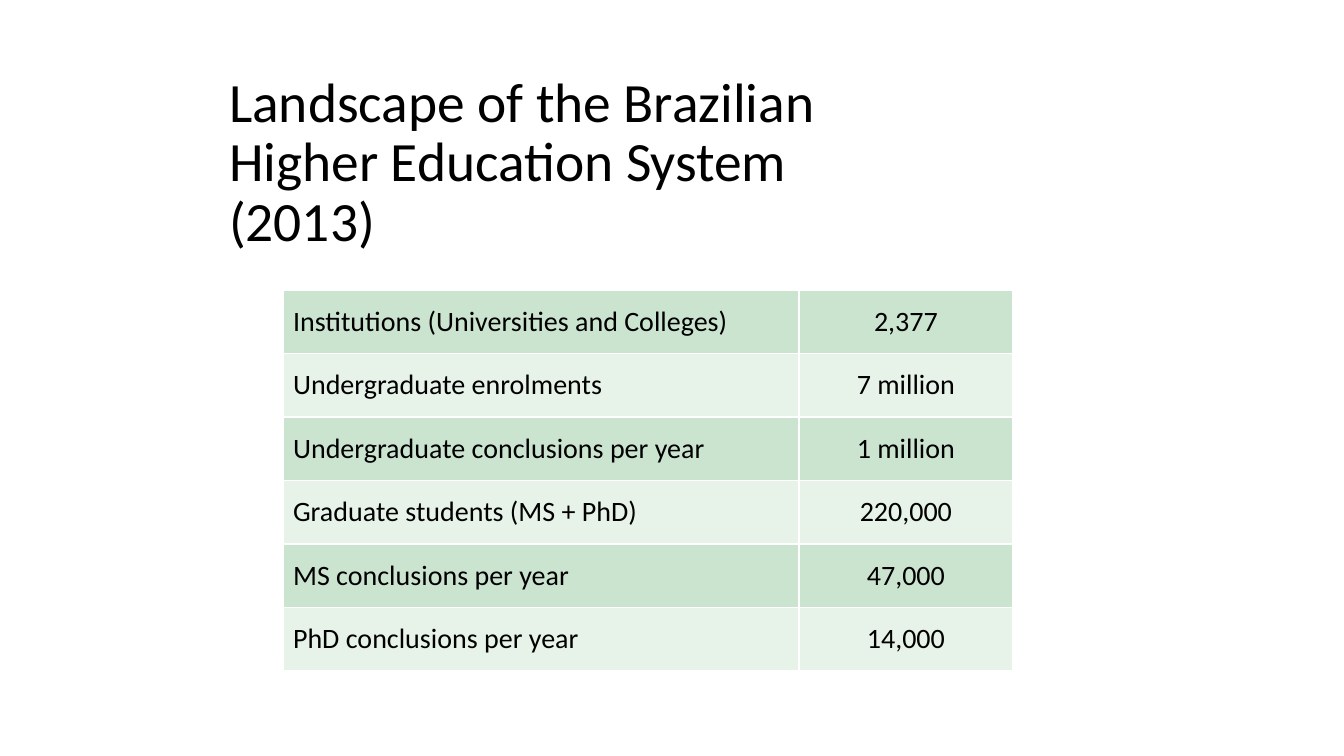
from dataclasses import dataclass

from lxml.etree import SubElement
from pptx import Presentation
from pptx.dml.color import RGBColor
from pptx.enum.text import MSO_ANCHOR, MSO_AUTO_SIZE, PP_ALIGN
from pptx.oxml.ns import qn
from pptx.util import Emu, Pt

TITLE = "Landscape of the Brazilian Higher Education System (2013)"
FIGURES = [
    ("Institutions (Universities and Colleges)", "2,377"),
    ("Undergraduate enrolments", "7 million"),
    ("Undergraduate conclusions per year", "1 million"),
    ("Graduate students (MS + PhD)", "220,000"),
    ("MS conclusions per year", "47,000"),
    ("PhD conclusions per year", "14,000"),
]

SLIDE_SIZE = (1344, 756)
TITLE_BOX = (219, 101, 703, 126)
TABLE_AT = (283, 290)
TABLE_HEIGHT = 381
COLUMN_WIDTHS = (516, 214)
COLUMN_ALIGN = (PP_ALIGN.LEFT, PP_ALIGN.CENTER)


@dataclass(frozen=True)
class Theme:
    font: str = "Calibri"
    text: str = "000000"
    bands: tuple = ("CBE4D0", "E7F2E9")
    border: str = "FFFFFF"
    border_pt: float = 1
    title_pt: float = 39.6
    cell_pt: float = 20


THEME = Theme()


def px(n):
    return Emu(round(n * 914400 / 100.8))


def set_all(target, values):
    for name, value in values.items():
        setattr(target, name, value)


def write(tf, text, size, **paragraph_format):
    p = tf.paragraphs[0]
    set_all(p, paragraph_format)
    r = p.add_run()
    r.text = text
    set_all(r.font, {"name": THEME.font, "size": Pt(size), "bold": False})
    r.font.color.rgb = RGBColor.from_string(THEME.text)


def add_borders(cell):
    """Draw all four edges; they must precede the fill in the cell's XML."""
    tcPr = cell._tc.get_or_add_tcPr()
    for edge in ("lnL", "lnR", "lnT", "lnB"):
        ln = SubElement(tcPr, qn(f"a:{edge}"), w=str(Pt(THEME.border_pt)))
        fill = SubElement(ln, qn("a:solidFill"))
        SubElement(fill, qn("a:srgbClr"), val=THEME.border)


def add_title(s):
    sp = s.shapes.title
    set_all(sp, dict(zip(("left", "top", "width", "height"), map(px, TITLE_BOX))))
    set_all(sp.text_frame, {
        "word_wrap": True,
        "auto_size": MSO_AUTO_SIZE.NONE,
        "vertical_anchor": MSO_ANCHOR.MIDDLE,
    })
    write(sp.text_frame, TITLE, THEME.title_pt,
          alignment=PP_ALIGN.LEFT, line_spacing=0.9)


def add_figures(s):
    table = s.shapes.add_table(
        len(FIGURES), len(COLUMN_WIDTHS), *map(px, TABLE_AT),
        px(sum(COLUMN_WIDTHS)), px(TABLE_HEIGHT)).table
    set_all(table, {"first_row": False, "horz_banding": False})
    for column, width in zip(table.columns, COLUMN_WIDTHS):
        column.width = px(width)
    for i, figures in enumerate(FIGURES):
        table.rows[i].height = px(TABLE_HEIGHT / len(FIGURES))
        for j, text in enumerate(figures):
            cell = table.cell(i, j)
            cell.vertical_anchor = MSO_ANCHOR.MIDDLE
            add_borders(cell)
            cell.fill.solid()
            cell.fill.fore_color.rgb = RGBColor.from_string(THEME.bands[i % 2])
            write(cell.text_frame, text, THEME.cell_pt, alignment=COLUMN_ALIGN[j])


def main():
    prs = Presentation()
    prs.slide_width, prs.slide_height = map(px, SLIDE_SIZE)
    s = prs.slides.add_slide(prs.slide_layouts[5])
    add_title(s)
    add_figures(s)
    prs.save("out.pptx")


if __name__ == "__main__":
    main()
